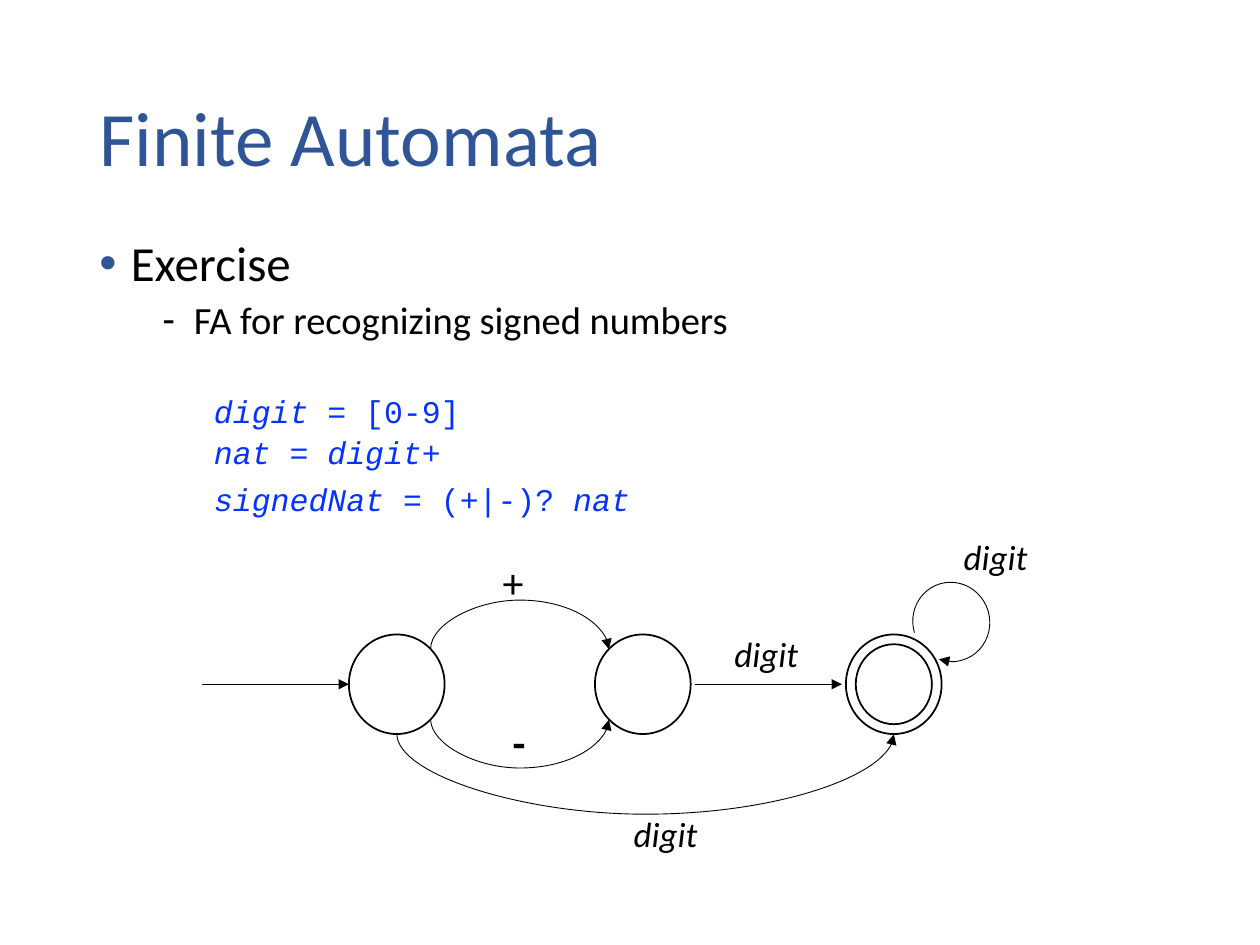
from pptx import Presentation
from pptx.dml.color import RGBColor
from pptx.enum import shapes as kinds, text as modes
from pptx.oxml import parse_xml
from pptx.oxml.ns import nsdecls, qn
from pptx.util import Pt

HUES = {"head": "2F5597", "ink": "000000", "code": "0432FF"}
OVAL = kinds.MSO_SHAPE.OVAL
LINK = kinds.MSO_CONNECTOR


def hue(name):
    return RGBColor.from_string(HUES[name])


def node(tag, attrs="", inner=""):
    return parse_xml(f"<a:{tag} {nsdecls('a')} {attrs}>{inner}</a:{tag}>")


def add_text(slide, box, anchor=modes.MSO_ANCHOR.TOP, wrap=True):
    frame = slide.shapes.add_textbox(*map(Pt, box)).text_frame
    frame.word_wrap = wrap
    frame.vertical_anchor = anchor
    return frame


def add_run(para, words, size, color="ink", font="Calibri", italic=False, bold=False):
    run = para.add_run()
    run.text = words
    run.font.size = Pt(size)
    run.font.name = font
    run.font.italic = italic
    run.font.bold = bold
    run.font.color.rgb = hue(color)


def add_title(slide, box):
    para = add_text(slide, box, modes.MSO_ANCHOR.MIDDLE).paragraphs[0]
    para.line_spacing = 0.9
    add_run(para, "Finite Automata", 44, "head")


def add_body(slide, box):
    frame = add_text(slide, box)
    items = [("Exercise", 28, 18, 10, "•", "head"),
             ("FA for recognizing signed numbers", 22, 54, 5, "-", "ink")]
    for i, (words, size, left, gap, mark, color) in enumerate(items):
        para = frame.add_paragraph() if i else frame.paragraphs[0]
        para.line_spacing = 0.9
        para.space_before = Pt(gap)
        props = para._p.get_or_add_pPr()
        props.set("marL", str(Pt(left)))
        props.set("indent", str(Pt(-18)))
        props.append(node("buClr", inner=f'<a:srgbClr val="{HUES[color]}"/>'))
        props.append(node("buFont", 'typeface="Arial"'))
        props.append(node("buChar", f'char="{mark}"'))
        add_run(para, words, size)


def add_code(slide, box, lines):
    """Each line is a list of (words, italic) runs."""
    frame = add_text(slide, box)
    for i, line in enumerate(lines):
        para = frame.add_paragraph() if i else frame.paragraphs[0]
        para.line_spacing = 1.1
        for words, italic in line:
            add_run(para, words, 18, "code", "Courier New", italic)


def add_rules(slide, box):
    left, top, wide, high = box
    add_code(slide, (left, top, 180, 55.4),
             [[("digit ", True), ("= [0-9]", False)],
              [("nat", True), (" = ", False), ("digit", True), ("+", False)]])
    add_code(slide, (left, top + 50.4, wide, high - 50.4),
             [[("signedNat", True), (" = (+|-)? ", False), ("nat", True)]])


def set_line(shape, width):
    shape.line.color.rgb = hue("ink")
    shape.line.width = Pt(width)


def add_head(shape):
    shape.line._get_or_add_ln().append(node("tailEnd", 'type="triangle"'))


def add_ring(slide, box, kind=OVAL, width=1):
    ring = slide.shapes.add_shape(kind, *map(Pt, box))
    ring.shadow.inherit = False
    ring.fill.background()
    set_line(ring, width)
    return ring


def add_link(slide, x1, x2, y, kind=LINK.STRAIGHT):
    link = slide.shapes.add_connector(kind, Pt(x1), Pt(y), Pt(x2), Pt(y))
    set_line(link, 0.5)
    add_head(link)
    link._element.spPr.append(node("effectLst"))
    return link


def add_bow(slide, x1, x2, y, depth):
    """Curved link between two points at one height; depth > 0 sags down."""
    thin, span = 0.25, x2 - x1
    bow = add_link(slide, x1, x2, y, LINK.CURVE)
    bow.left, bow.top = Pt((x1 + x2 - thin) / 2), Pt(y - span / 2)
    bow.width, bow.height = Pt(thin), Pt(span)
    props = bow._element.spPr
    frame = props.find(qn("a:xfrm"))
    frame.set("rot", str(270 * 60000))
    frame.set("flipH", "1")
    geom = props.find(qn("a:prstGeom"))
    for old in geom.findall(qn("a:avLst")):
        geom.remove(old)
    ratio = round(depth / thin * 100000)
    geom.append(node("avLst", inner=f'<a:gd name="adj1" fmla="val {ratio}"/>'))


def add_graph(slide, box):
    left, top, wide, high = box
    ring_w, ring_h, inset = 54.7, 56.9, 5.6
    mid = top + 88.6
    start, sign, accept = (left + x for x in (84.2, 224.8, 368.2))
    for x in (start, sign, accept):
        add_ring(slide, (x, mid - ring_h / 2, ring_w, ring_h))
    add_ring(slide, (accept + inset, mid - ring_h / 2 + inset,
                     ring_w - 2 * inset, ring_h - 2 * inset))

    loop = add_ring(slide, (left + 405.7, top + 31, 45.4, 43.9),
                    kinds.MSO_SHAPE.ARC, 0.5)
    loop.rotation = 253.6
    loop.adjustments[0] = 162
    loop.adjustments[1] = 128.82
    add_head(loop)

    add_link(slide, left, start, mid)
    add_link(slide, sign + ring_w + 2.3, accept - 2.3, mid)
    corner = ring_w * 0.146
    for side in (-1, 1):
        add_bow(slide, start + ring_w - corner, sign + corner,
                mid + side * ring_h * 0.354, side * 27.3)
    add_bow(slide, start + ring_w / 2, accept + ring_w / 2, mid + ring_h / 2, 45)

    for x, y in ((428.4, 0), (297.4, 55.4), (239.8, 158.4)):
        para = add_text(slide, (left + x, top + y, 57.6, 31.7)).paragraphs[0]
        add_run(para, "digit", 20, italic=True)
    plus = add_text(slide, (left + 164.9, top + 12.2, 26.6, 36), wrap=False)
    add_run(plus.paragraphs[0], "+", 24)
    minus = add_text(slide, (left + 170.6, top + 103.7, 20.9, 37.4))
    add_run(minus.paragraphs[0], "-", 24, bold=True)


def main():
    deck = Presentation()
    deck.slide_width, deck.slide_height = Pt(720), Pt(540)
    slide = deck.slides.add_slide(deck.slide_layouts[6])
    add_title(slide, (49.7, 28.8, 620.6, 104.4))
    add_body(slide, (49.7, 133.2, 656.6, 124.6))
    add_rules(slide, (115.2, 218.2, 293.8, 81.4))
    add_graph(slide, (115.2, 302.4, 486, 190))
    deck.save("out.pptx")


if __name__ == "__main__":
    main()
